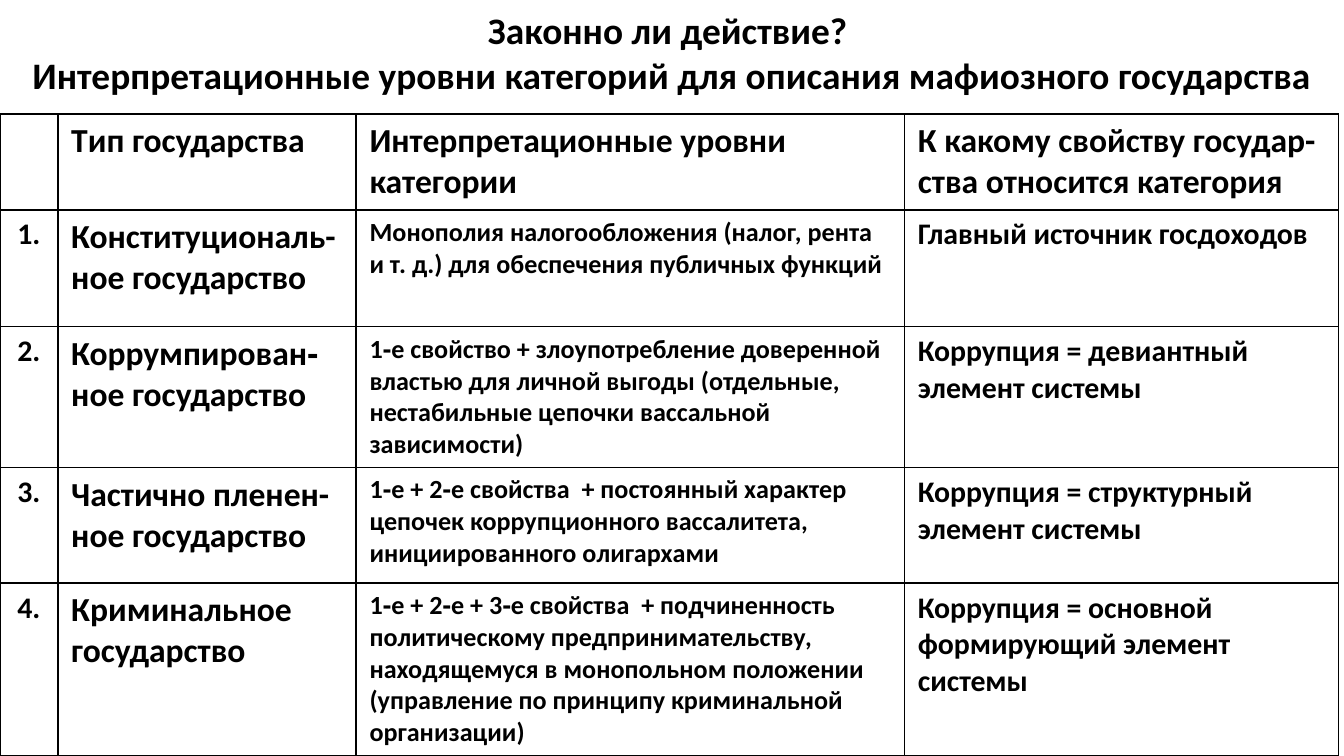
"""Build a slide with a table of state types and their interpretive levels."""
import pptx
import pptx.dml.color
import pptx.enum.text
import pptx.oxml
import pptx.oxml.ns
import pptx.util

WIDTH = 10
HEIGHT = WIDTH * 9 / 16
TITLE_HEIGHT, TABLE_TOP = 0.77, 0.85
INK, PAPER = "000000", "FFFFFF"
TITLE = ("Законно ли действие? \v"
         "Интерпретационные уровни категорий для описания мафиозного государства")
COLUMN_WIDTHS = [0.43, 2.22, 4.08, 3.23]
ROW_HEIGHTS = [0.63, 0.87, 0.87, 0.86, 0.96]
HEADER_SIZES = [18, 18, 18, 18]
BODY_SIZES = [16, 18, 14, 16]
ROWS = [
    ("", "Tип государства", "Интерпретационные уровни категории",
     "К какому свойству государ-ства относится категория"),
    ("1.", "Конституциональ-ное государство",
     "Монополия налогообложения (налог, рента и т. д.) для обеспечения публичных функций",
     "Главный источник госдоходов"),
    ("2.", "Коррумпирован‐\nное государство",
     "1‐е свойство + злоупотребление доверенной властью для личной выгоды "
     "(отдельные, нестабильные цепочки вассальной зависимости)",
     "Коррупция = девиантный элемент системы"),
    ("3.", "Частично пленен-ное государство",
     "1‐е + 2‐е свойства  + постоянный характер цепочек коррупционного вассалитета, "
     "инициированного олигархами",
     "Коррупция = структурный элемент системы"),
    ("4.", "Криминальное государство",
     "1‐е + 2‐е + 3‐е свойства  + подчиненность политическому предпринимательству, "
     "находящемуся в монопольном положении (управление по принципу криминальной организации)",
     "Коррупция = основной формирующий элемент системы"),
]
ALIGN = pptx.enum.text.PP_ALIGN
ANCHOR = pptx.enum.text.MSO_ANCHOR
inch = pptx.util.Inches


def rgb(color):
    return pptx.dml.color.RGBColor.from_string(color)


def write(tf, text, size, align=ALIGN.LEFT, color=INK, bold=True, font="Calibri"):
    tf.text = text
    tf.word_wrap = True
    for p in tf.paragraphs:
        p.alignment = align
        for target in (p, *p.runs):
            target.font.name = font
            target.font.size = pptx.util.Pt(size)
            target.font.bold = bold
            target.font.color.rgb = rgb(color)


def add_borders(cell, color=INK, width=1):
    props = cell._tc.get_or_add_tcPr()
    for i, side in enumerate(("lnL", "lnR", "lnT", "lnB")):
        props.insert(i, pptx.oxml.parse_xml(
            f'<a:{side} {pptx.oxml.ns.nsdecls("a")} w="{pptx.util.Pt(width)}">'
            f'<a:solidFill><a:srgbClr val="{color}"/></a:solidFill></a:{side}>'))


def add_title(s):
    title = s.shapes.title
    title.left, title.top = 0, 0
    title.width, title.height = inch(WIDTH), inch(TITLE_HEIGHT)
    write(title.text_frame, TITLE, 20, align=ALIGN.CENTER)
    title.text_frame.vertical_anchor = ANCHOR.MIDDLE


def add_state_table(s):
    table = s.shapes.add_table(
        len(ROWS), len(COLUMN_WIDTHS), 0, inch(TABLE_TOP),
        inch(sum(COLUMN_WIDTHS)), inch(sum(ROW_HEIGHTS))).table
    table.first_row = table.horz_banding = False
    for column, width in zip(table.columns, COLUMN_WIDTHS):
        column.width = inch(width)
    for r, (texts, height) in enumerate(zip(ROWS, ROW_HEIGHTS)):
        table.rows[r].height = inch(height)
        sizes = BODY_SIZES if r else HEADER_SIZES
        for c, (text, size) in enumerate(zip(texts, sizes)):
            cell = table.cell(r, c)
            cell.fill.solid()
            cell.fill.fore_color.rgb = rgb(PAPER)
            cell.vertical_anchor = ANCHOR.TOP
            write(cell.text_frame, text, size, align=ALIGN.LEFT if c else ALIGN.CENTER)
            add_borders(cell)


def main():
    prs = pptx.Presentation()
    prs.slide_width, prs.slide_height = inch(WIDTH), inch(HEIGHT)
    s = prs.slides.add_slide(prs.slide_layouts[5])
    add_title(s)
    add_state_table(s)
    prs.save("out.pptx")


if __name__ == "__main__":
    main()
